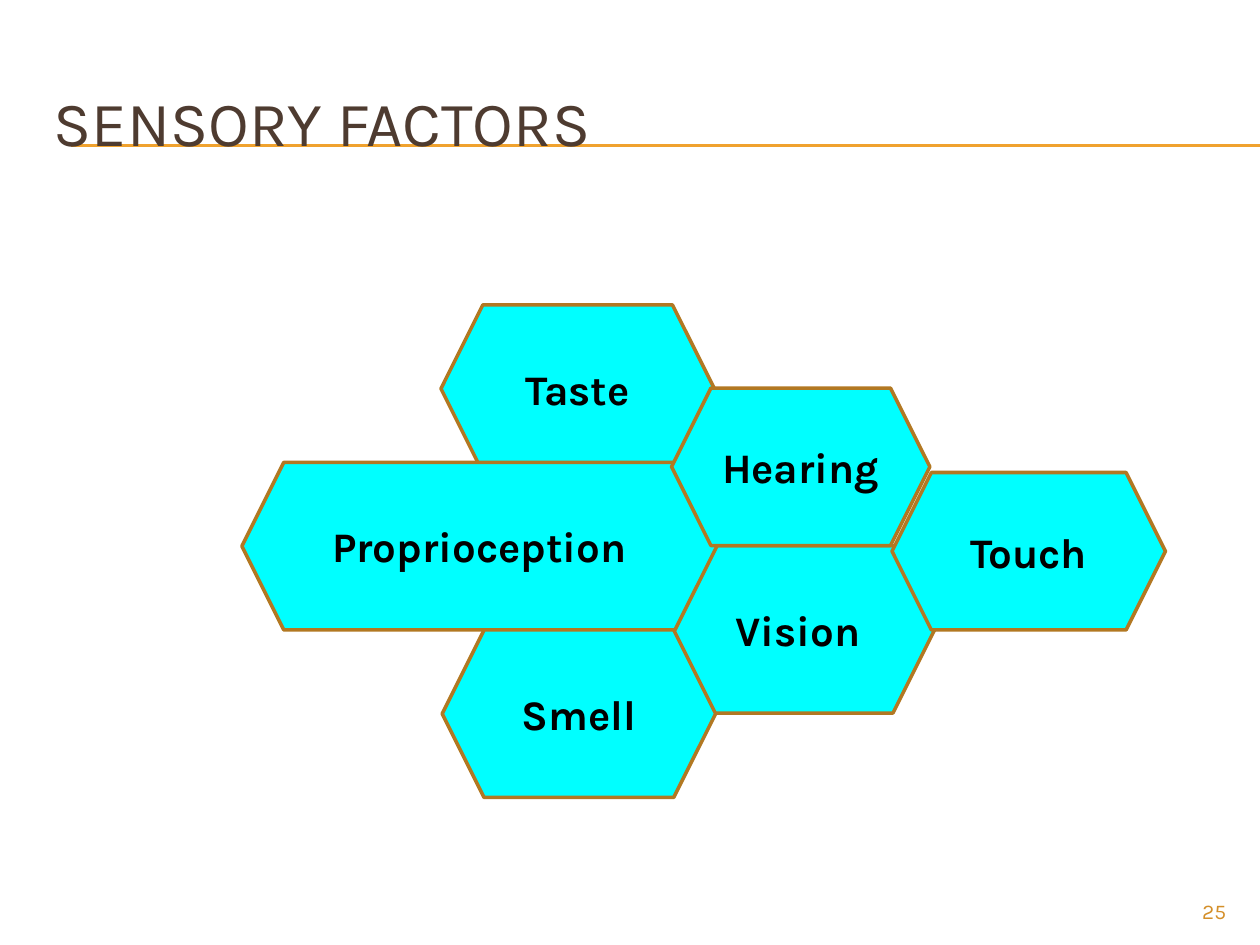
from pptx import Presentation
from pptx.dml.color import RGBColor
from pptx.enum.shapes import MSO_CONNECTOR, MSO_SHAPE
from pptx.enum.text import MSO_ANCHOR, PP_ALIGN
from pptx.oxml.ns import qn
from pptx.util import Inches, Pt
from lxml import etree

COLORS = {
    "title": "4E3B30",
    "rule": "F0A22E",
    "cell": "00FFFF",
    "cell_edge": "B27822",
    "cell_text": "000000",
    "page_number": "D48F29",
}

# label, left, top, width, height; later cells overlap earlier ones
SENSES = [
    ("Vision", 5.25, 4.33, 2.17, 1.33),
    ("Touch", 7.08, 3.75, 2.17, 1.25),
    ("Taste", 3.5, 2.42, 2.17, 1.33),
    ("Proprioception", 1.92, 3.67, 3.77, 1.33),
    ("Smell", 3.51, 5, 2.17, 1.33),
    ("Hearing", 5.33, 3.08, 2.05, 1.25),
]


class SlideBuilder:
    """Holds the font, the colours and the slide being drawn."""

    def __init__(self, slide, font="Karla", colors=COLORS):
        self.slide = slide
        self.font = font
        self.colors = colors

    def color(self, name):
        return RGBColor.from_string(self.colors[name])

    def fill_frame(self, frame, text, size, color, align, anchor, bold=False):
        frame.text = text
        frame.vertical_anchor = anchor
        paragraph = frame.paragraphs[0]
        paragraph.alignment = align
        font = paragraph.runs[0].font
        font.name = self.font
        font.size = Pt(size)
        font.bold = bold
        font.color.rgb = self.color(color)

    def text(self, text, box, size, color, align=PP_ALIGN.LEFT,
             anchor=MSO_ANCHOR.TOP):
        frame = self.slide.shapes.add_textbox(*map(Inches, box)).text_frame
        frame.word_wrap = True
        self.fill_frame(frame, text, size, color, align, anchor)

    def rule(self, left, right, y):
        rule = self.slide.shapes.add_connector(
            MSO_CONNECTOR.STRAIGHT,
            Inches(left), Inches(y), Inches(right), Inches(y))
        rule.line.color.rgb = self.color("rule")
        rule.line.width = Pt(0.75)
        etree.SubElement(rule._element.spPr, qn("a:effectLst"))

    def honeycomb(self, cells):
        """Draw labelled hexagons together in one group."""
        group = self.slide.shapes.add_group_shape()
        for label, *box in cells:
            cell = group.shapes.add_shape(MSO_SHAPE.HEXAGON, *map(Inches, box))
            cell.shadow.inherit = False
            cell.fill.solid()
            cell.fill.fore_color.rgb = self.color("cell")
            cell.line.color.rgb = self.color("cell_edge")
            cell.line.width = Pt(2)
            cell.text_frame.word_wrap = False
            self.fill_frame(cell.text_frame, label, 24, "cell_text",
                            PP_ALIGN.CENTER, MSO_ANCHOR.MIDDLE, bold=True)


def main():
    deck = Presentation()
    deck.slide_width = Inches(10)
    deck.slide_height = Inches(7.5)
    builder = SlideBuilder(deck.slides.add_slide(deck.slide_layouts[6]))

    for y in (1.15, 1.16):
        builder.rule(0.56, 10, y)
    builder.honeycomb(SENSES)
    builder.text("SENSORY FACTORS", (0.33, 0.5, 9.5, 0.92), 36, "title",
                 anchor=MSO_ANCHOR.MIDDLE)
    builder.text("25", (9, 7.08, 0.83, 0.27), 12, "page_number",
                 align=PP_ALIGN.RIGHT)
    deck.save("out.pptx")


if __name__ == "__main__":
    main()
